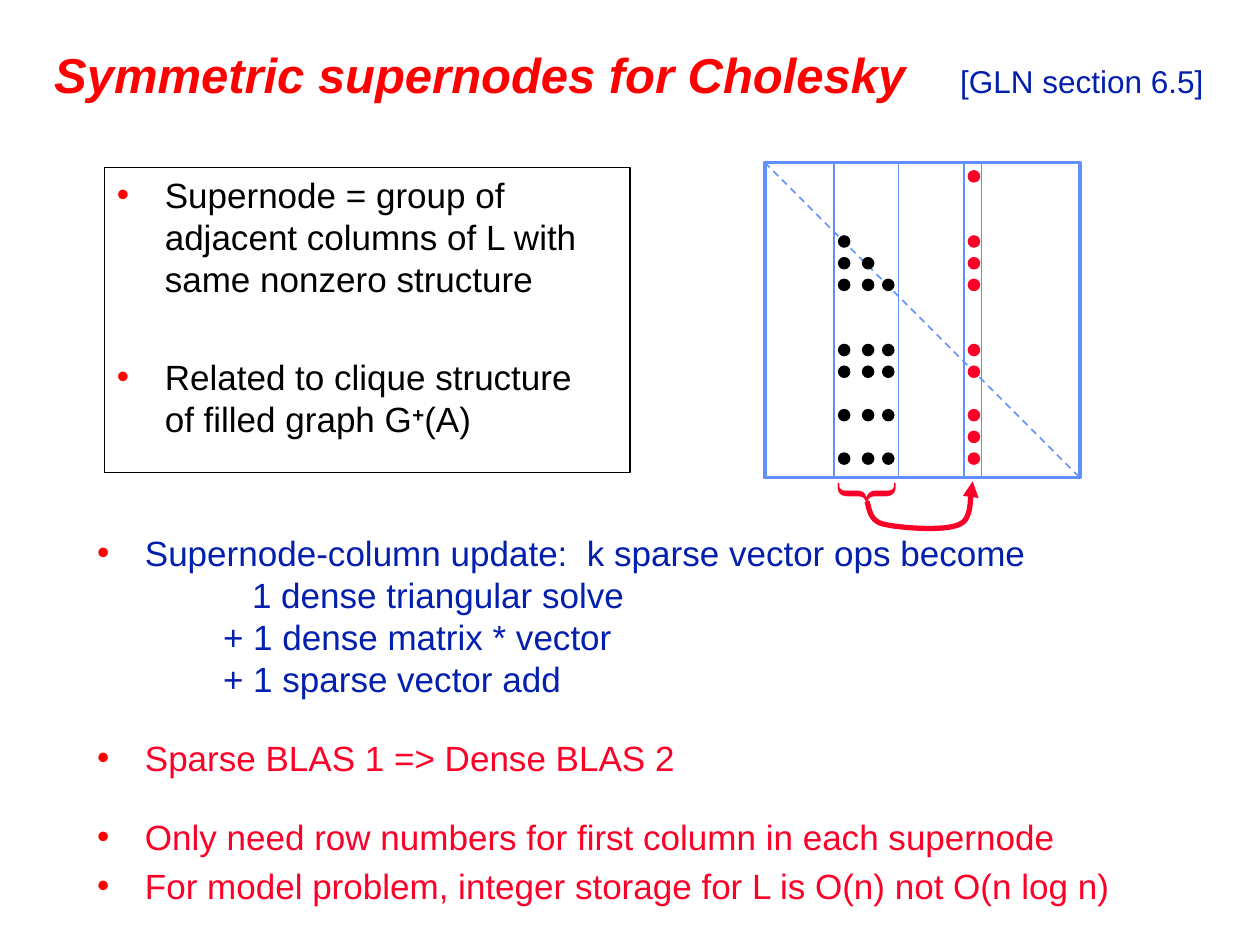
import pptx
import pptx.dml.color
import pptx.enum.dml
import pptx.enum.shapes
import pptx.enum.text
import pptx.oxml
import pptx.oxml.ns
import pptx.util
from lxml import etree

Inches = pptx.util.Inches
Pt = pptx.util.Pt
Shape = pptx.enum.shapes.MSO_SHAPE
Anchor = pptx.enum.text.MSO_ANCHOR

RED, CRIMSON, NAVY, BLUE, BLACK = "FF0000", "FC0128", "021FAE", "618FFD", "000000"


def color(value):
    return pptx.dml.color.RGBColor.from_string(value)


def add_xml(parent, tag, **attributes):
    return etree.SubElement(parent, pptx.oxml.ns.qn(tag), attributes)


def add_text(para, text, size=20, fill=BLACK, font="Arial", bold=False, italic=False, raised=False):
    for number, line in enumerate(text.split("\n")):
        if number:
            para.add_line_break()
        span = para.add_run()
        span.text = line
        span.font.name = font
        span.font.size = Pt(size)
        span.font.bold = bold
        span.font.italic = italic
        span.font.color.rgb = color(fill)
        if raised:
            span.font._element.set("baseline", "30000")


class SlideBuilder:
    line_pitch = Pt(24)
    bullet_indent = 0.38

    def __init__(self, page):
        self.page = page

    def place(self, box, left, top, width, height):
        box.left, box.top = Inches(left), Inches(top)
        box.width, box.height = Inches(width), Inches(height)
        return box

    def frame(self, box, anchor=Anchor.TOP):
        frame = box.text_frame
        frame.word_wrap = True
        frame.auto_size = pptx.enum.text.MSO_AUTO_SIZE.NONE
        frame.vertical_anchor = anchor
        return frame

    def title(self, text, note, note_at):
        box = self.place(self.page.shapes.title, 0.33, 0.25, 9.33, 0.67)
        para = self.frame(box, Anchor.MIDDLE).paragraphs[0]
        para.alignment = pptx.enum.text.PP_ALIGN.LEFT
        tabs = add_xml(para._p.get_or_add_pPr(), "a:tabLst")
        add_xml(tabs, "a:tab", pos=str(Inches(note_at)), algn="l")
        add_text(para, text + "\t", size=28, fill=RED, bold=True, italic=True)
        add_text(para, note, size=18, fill=NAVY)

    def paragraph(self, frame, before, indent=None):
        first = not frame.paragraphs[0].runs
        para = frame.paragraphs[0] if first else frame.add_paragraph()
        para.alignment = pptx.enum.text.PP_ALIGN.LEFT
        para.line_spacing = self.line_pitch
        para.space_before = Pt(before)
        properties = para._p.get_or_add_pPr()
        if indent is None:
            properties.set("marL", str(Inches(self.bullet_indent)))
            properties.set("indent", str(-Inches(self.bullet_indent)))
            add_xml(add_xml(properties, "a:buClr"), "a:srgbClr", val=RED)
            add_xml(properties, "a:buFont", typeface="Arial")
            add_xml(properties, "a:buChar", char="•")
        else:
            properties.set("marL", str(Inches(indent)))
            properties.set("indent", "0")
            add_xml(properties, "a:buNone")
        return para

    def shape(self, kind, left, top, width, height, fill=None, line=None, weight=1):
        box = self.page.shapes.add_shape(
            kind, Inches(left), Inches(top), Inches(width), Inches(height))
        box.shadow.inherit = False
        self.paint(box, fill, line, weight)
        return box

    def paint(self, box, fill, line, weight):
        if fill:
            box.fill.solid()
            box.fill.fore_color.rgb = color(fill)
        else:
            box.fill.background()
        if line:
            box.line.color.rgb = color(line)
            box.line.width = Pt(weight)
        else:
            box.line.fill.background()

    def dot(self, left, top, fill):
        self.shape(Shape.OVAL, left, top, 0.1, 0.1, fill=fill)

    def line(self, start, end, dashed=False):
        link = self.page.shapes.add_connector(
            pptx.enum.shapes.MSO_CONNECTOR.STRAIGHT, *map(Inches, start + end))
        link.line.color.rgb = color(BLUE)
        link.line.width = Pt(1)
        if dashed:
            link.line.dash_style = pptx.enum.dml.MSO_LINE.DASH
        add_xml(link._element.spPr, "a:effectLst")

    def brace(self, left, top, width, height):
        box = self.page.shapes.add_textbox(
            Inches(left), Inches(top), Inches(width), Inches(height))
        box.rotation = 270
        box.text_frame.word_wrap = False
        add_text(box.text_frame.paragraphs[0], "{", size=40, fill=CRIMSON, font="Times New Roman")

    def curved_arrow(self, start, curves, steps=12):
        points = []
        origin = start
        for first, second, end in curves:
            for step in range(1, steps + 1):
                t = step / steps
                weights = ((1 - t) ** 3, 3 * t * (1 - t) ** 2, 3 * t * t * (1 - t), t ** 3)
                corners = zip(origin, first, second, end)
                points.append([Inches(sum(w * c for w, c in zip(weights, axis)))
                               for axis in corners])
            origin = end
        builder = self.page.shapes.build_freeform(*map(Inches, start))
        builder.add_line_segments(points, close=False)
        arrow = builder.convert_to_shape()
        arrow.shadow.inherit = False
        self.paint(arrow, None, CRIMSON, 3)
        add_xml(arrow.line._get_or_add_ln(), "a:tailEnd", type="triangle")


def add_notes_on_update(slide):
    box = slide.place(slide.page.placeholders[1], 0.67, 4.17, 8.75, 3.17)
    frame = slide.frame(box)
    for text, fill, before, indent in (
        ("Supernode-column update:  k sparse vector ops become", NAVY, 4, None),
        ("1 dense triangular solve", NAVY, 0, 1.23),
        ("+ 1 dense matrix * vector\n+ 1 sparse vector add", NAVY, 0, 1),
        ("Sparse BLAS 1 => Dense BLAS 2", CRIMSON, 21, None),
        ("Only need row numbers for first column in each supernode", CRIMSON, 21, None),
        ("For model problem, integer storage for L is O(n) not O(n log n)", CRIMSON, 4, None),
    ):
        add_text(slide.paragraph(frame, before, indent), text, fill=fill)


def add_matrix(slide):
    left, top, side = 6.07, 1.29, 2.5
    bottom = top + side
    slide.shape(Shape.RECTANGLE, left, top, side, side, line=BLUE, weight=2.25)
    slide.line((left, top), (left + side, bottom), dashed=True)
    supernode_rows = (3, 4, 5, 8, 9, 11, 13)
    columns = [(x, supernode_rows[skip:], BLACK) for skip, x in enumerate((6.65, 6.84, 7))]
    columns.append((7.68, (0, 3, 4, 5, 8, 9, 11, 12, 13), CRIMSON))
    for x, rows, fill in columns:
        for row in rows:
            slide.dot(x, 1.35 + row * 2.24 / 13, fill)
    for x in (6.62, 7.13, 7.65, 7.79):
        slide.line((x, top), (x, bottom))
    slide.brace(6.58, 3.53, 0.47, 0.77)
    slide.curved_arrow((6.88, 3.98), (
        ((6.9, 4.01), (6.89, 4.13), (7.01, 4.16)),
        ((7.14, 4.19), (7.5, 4.22), (7.62, 4.16)),
        ((7.73, 4.11), (7.69, 3.9), (7.72, 3.82)),
    ))


def add_definition(slide):
    box = slide.shape(Shape.RECTANGLE, 0.83, 1.33, 4.17, 2.42, line=BLACK)
    frame = slide.frame(box)
    add_text(slide.paragraph(frame, 4),
             "Supernode = group of adjacent columns of L with same nonzero structure")
    para = slide.paragraph(frame, 32)
    add_text(para, "Related to clique structure\nof filled graph G")
    add_text(para, "+", bold=True, raised=True)
    add_text(para, "(A)")


def main():
    deck = pptx.Presentation()
    deck.slide_width, deck.slide_height = Inches(10), Inches(7.5)
    slide = SlideBuilder(deck.slides.add_slide(deck.slide_layouts[1]))
    slide.title("Symmetric supernodes for Cholesky", "[GLN section 6.5]", 7.19)
    add_notes_on_update(slide)
    add_matrix(slide)
    add_definition(slide)
    deck.save("out.pptx")


if __name__ == "__main__":
    main()
